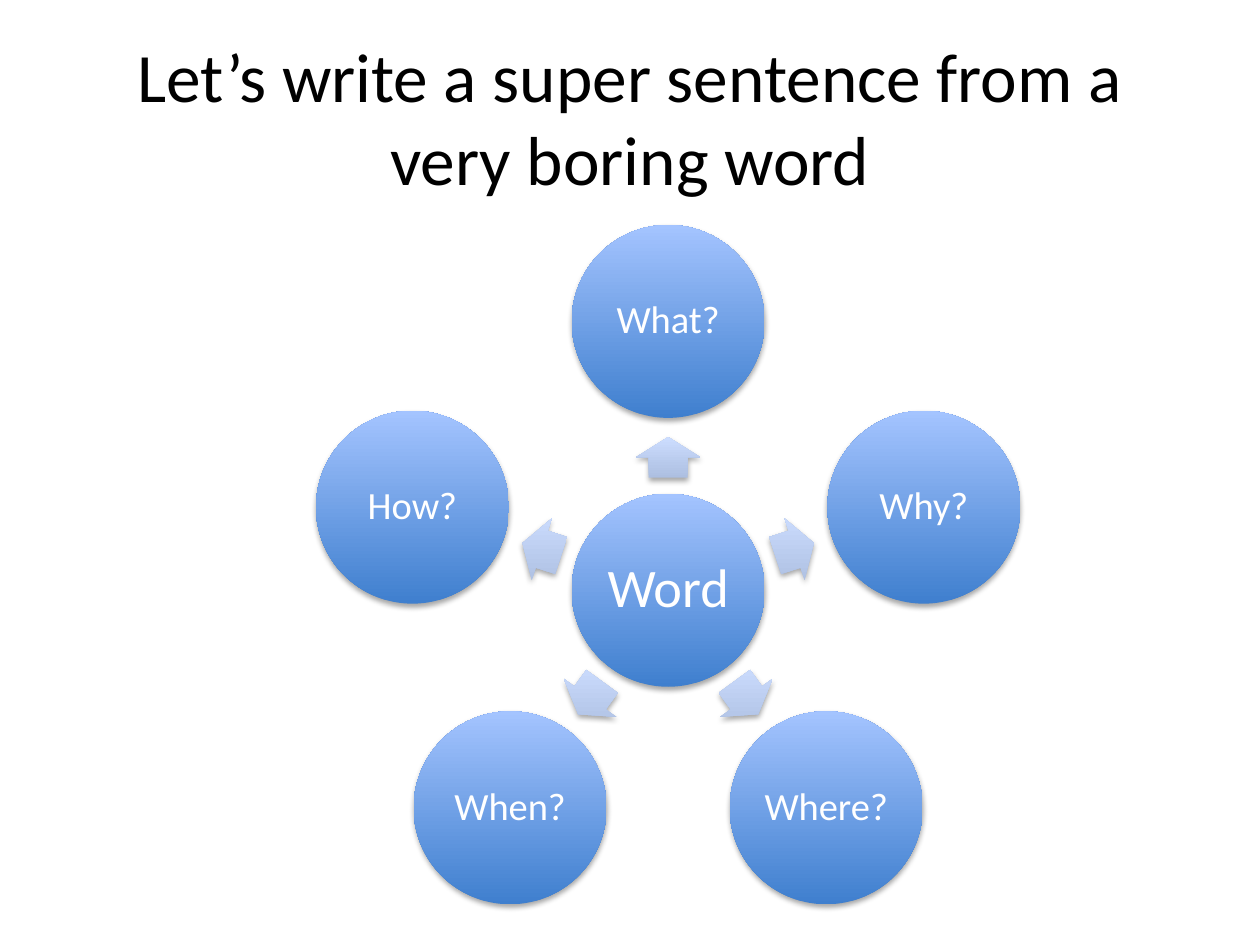
from math import cos, radians, sin

from lxml import etree
from pptx import Presentation
from pptx import util as u
from pptx.dml.color import RGBColor
from pptx.enum import shapes, text
from pptx.oxml.ns import qn

HUB = (13.47, 11.9)      # centre of the wheel, cm
RING, MID = 5.42, 2.68   # hub to outer circles, hub to arrows
DISC = 3.89
ARROW = (0.82, 1.31)
ASKS = ["What?", "Why?", "Where?", "When?", "How?"]


def rgb(code):
    return RGBColor.from_string(code)


def write(shape, words, size, color, pad=None, lead=None):
    """Put centred text in a shape."""
    frame = shape.text_frame
    frame.word_wrap = True
    frame.auto_size = text.MSO_AUTO_SIZE.NONE
    frame.vertical_anchor = text.MSO_ANCHOR.MIDDLE
    if pad is not None:
        frame.margin_left = frame.margin_right = u.Cm(pad)
        frame.margin_top = frame.margin_bottom = u.Cm(pad)
    para = frame.paragraphs[0]
    para.alignment = text.PP_ALIGN.CENTER
    if lead:
        para.line_spacing = lead
    run = para.add_run()
    run.text = words
    run.font.name = "Calibri"
    run.font.size = u.Pt(size)
    run.font.color.rgb = rgb(color)


def shade(shape, low, high):
    """Upright gradient, dark at the foot, that ignores rotation."""
    shape.fill.gradient()
    shape.fill.gradient_angle = 90
    for stop, code in zip(shape.fill.gradient_stops, (low, high)):
        stop.color.rgb = rgb(code)
    shape._element.spPr.find(qn("a:gradFill")).set("rotWithShape", "0")
    shape.line.fill.background()


def drop(shape):
    """Soft shadow just below the shape."""
    shape.shadow.inherit = False
    glow = shape._element.spPr.find(qn("a:effectLst"))
    cast = etree.SubElement(glow, qn("a:outerShdw"), blurRad="40000",
                            dist="23000", dir="5400000", rotWithShape="0")
    ink = etree.SubElement(cast, qn("a:srgbClr"), val="000000")
    etree.SubElement(ink, qn("a:alpha"), val="35000")


def place(slide, kind, spot, size, low, high):
    """Add a shaded shape centred on a spot."""
    (x, y), (wide, high_cm) = spot, size
    shape = slide.shapes.add_shape(
        kind, u.Cm(x - wide / 2), u.Cm(y - high_cm / 2),
        u.Cm(wide), u.Cm(high_cm))
    shade(shape, low, high)
    drop(shape)
    return shape


def disc(slide, spot, words, size, pad):
    shape = place(slide, shapes.MSO_SHAPE.OVAL, spot, (DISC, DISC),
                  "3F7FCE", "A4C4FF")
    write(shape, words, size, "FFFFFF", pad=pad, lead=0.9)


def arrow(slide, spot, turn):
    shape = place(slide, shapes.MSO_SHAPE.RIGHT_ARROW, spot, ARROW,
                  "ADBFE1", "CCDDFF")
    shape.adjustments[0] = 0.6
    shape.adjustments[1] = 0.5
    shape.rotation = turn


def polar(turn, far):
    """Point at a clockwise angle and distance from the hub."""
    return (HUB[0] + far * cos(radians(turn)),
            HUB[1] + far * sin(radians(turn)))


def main():
    deck = Presentation()
    deck.slide_width, deck.slide_height = u.Cm(25.4), u.Cm(19.05)
    slide = deck.slides.add_slide(deck.slide_layouts[5])

    # Title
    title = slide.shapes.title
    title.left, title.top = u.Cm(1.27), u.Cm(0.76)
    title.width, title.height = u.Cm(22.86), u.Cm(3.18)
    write(title, "Let’s write a super sentence from a very boring word",
          39.6, "000000")

    # Hub, then an arrow and a question on each spoke
    disc(slide, HUB, "Word", 31, 0.1)
    for i, ask in enumerate(ASKS):
        turn = (270 + i * 360 / len(ASKS)) % 360
        arrow(slide, polar(turn, MID), turn)
        disc(slide, polar(turn, RING), ask, 22, 0.08)

    deck.save("out.pptx")


if __name__ == "__main__":
    main()
